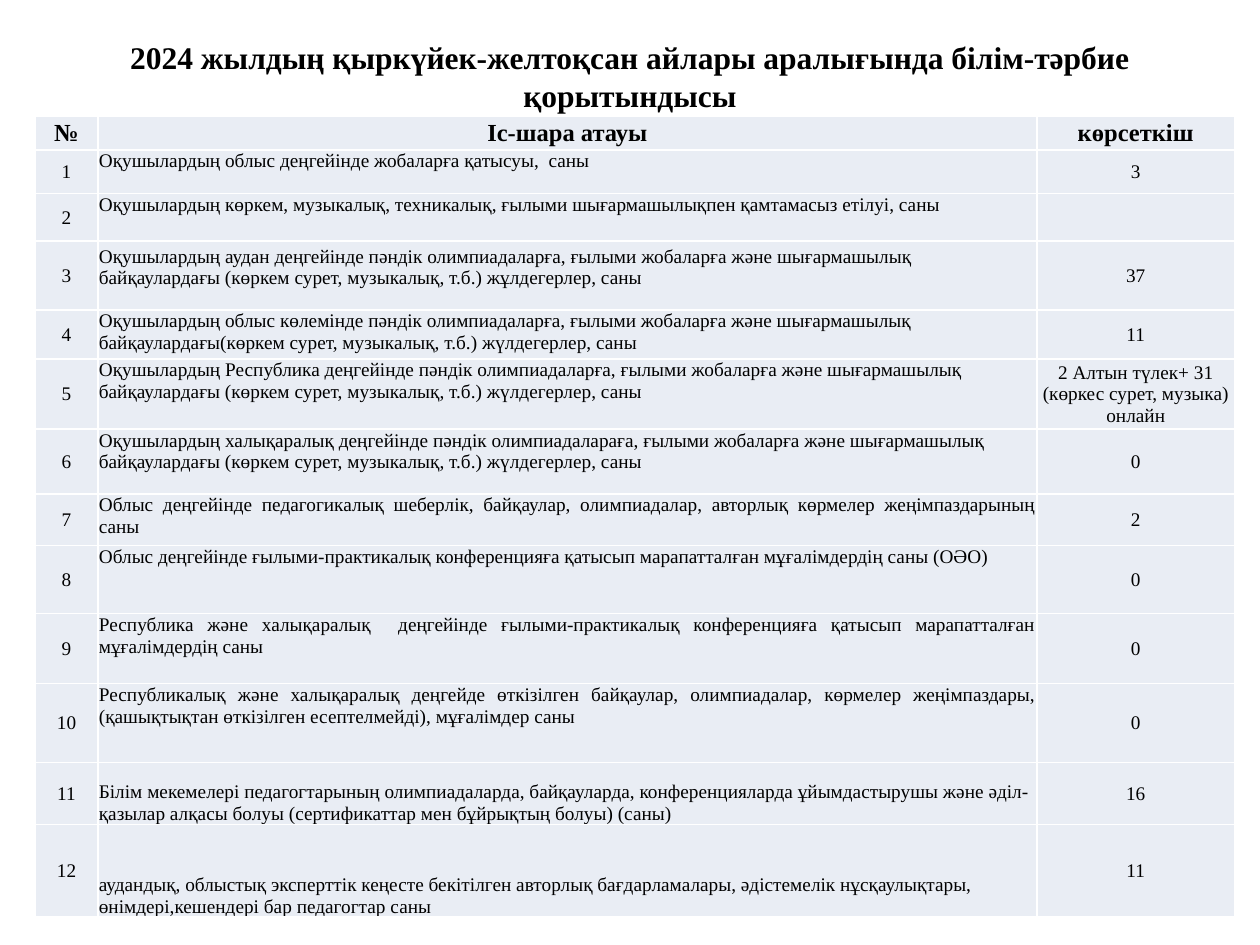
import pptx
import pptx.dml.color
import pptx.enum.text
import pptx.oxml
import pptx.oxml.ns
import pptx.util

Pt = pptx.util.Pt
ALIGN = pptx.enum.text.PP_ALIGN
ANCHOR = pptx.enum.text.MSO_ANCHOR
FONT = "Times New Roman"
BLACK, WHITE, CELL_FILL = "000000", "FFFFFF", "E9EDF4"

TITLE = "2024 жылдың қыркүйек-желтоқсан айлары аралығында білім-тәрбие қорытындысы"
HEADINGS = ("№", "Іс-шара атауы", "көрсеткіш")
COLUMN_WIDTHS = (36, 536.5, 113)
HEADING_HEIGHT = 19.5
LEFT, JUSTIFY = ALIGN.LEFT, ALIGN.JUSTIFY
TOP, BOTTOM = ANCHOR.TOP, ANCHOR.BOTTOM

# Row height, activity, result, activity alignment, activity anchor, top inset
ACTIVITIES = (
    (25, "Оқушылардың облыс деңгейінде жобаларға қатысуы,  саны",
     "3", LEFT, TOP, 0.5),
    (27, "Оқушылардың көркем, музыкалық, техникалық, ғылыми шығармашылықпен "
         "қамтамасыз етілуі, саны",
     "", LEFT, TOP, 0.5),
    (39.5, "Оқушылардың аудан деңгейінде пәндік олимпиадаларға, ғылыми жобаларға және "
           "шығармашылық байқаулардағы (көркем сурет, музыкалық, т.б.) жұлдегерлер, саны",
     "37", LEFT, TOP, 3),
    (28, "Оқушылардың облыс көлемінде пәндік олимпиадаларға, ғылыми жобаларға және "
         "шығармашылық байқаулардағы(көркем сурет, музыкалық, т.б.) жүлдегерлер, саны",
     "11", LEFT, TOP, 0.5),
    (37, "Оқушылардың Республика деңгейінде пәндік олимпиадаларға, ғылыми жобаларға және "
         "шығармашылық байқаулардағы (көркем сурет, музыкалық, т.б.) жүлдегерлер, саны",
     "2 Алтын түлек+ 31 (көркес сурет, музыка) онлайн", LEFT, TOP, 0.5),
    (37, "Оқушылардың халықаралық деңгейінде пәндік олимпиадалараға, ғылыми жобаларға және "
         "шығармашылық байқаулардағы (көркем сурет, музыкалық, т.б.) жүлдегерлер, саны",
     "0", LEFT, TOP, 0.5),
    (29.5, "Облыс деңгейінде педагогикалық шеберлік, байқаулар, олимпиадалар, авторлық "
           "көрмелер жеңімпаздарының саны",
     "2", JUSTIFY, TOP, 0.5),
    (39, "Облыс деңгейінде ғылыми-практикалық конференцияға қатысып марапатталған "
         "мұғалімдердің саны (ОӘО)",
     "0", JUSTIFY, TOP, 0.5),
    (40, "Республика және халықаралық  деңгейінде ғылыми-практикалық конференцияға "
         "қатысып марапатталған мұғалімдердің саны",
     "0", JUSTIFY, TOP, 0.5),
    (45, "Республикалық және халықаралық деңгейде өткізілген байқаулар, олимпиадалар, "
         "көрмелер жеңімпаздары,(қашықтықтан өткізілген есептелмейді), мұғалімдер саны",
     "0", JUSTIFY, TOP, 0.5),
    (35.5, "Білім мекемелері педагогтарының олимпиадаларда, байқауларда, конференцияларда "
           "ұйымдастырушы және әділ-қазылар алқасы болуы (сертификаттар мен бұйрықтың "
           "болуы) (саны)",
     "16", LEFT, BOTTOM, 0.5),
    (53, "аудандық, облыстық эксперттік кеңесте бекітілген авторлық бағдарламалары, "
         "әдістемелік нұсқаулықтары, өнімдері,кешендері бар педагогтар саны",
     "11", LEFT, BOTTOM, 0.5),
)


def color(hex_value):
    return pptx.dml.color.RGBColor.from_string(hex_value)


def write(paragraph, text, size, bold=False, align=ALIGN.CENTER):
    paragraph.alignment = align
    if not text:
        paragraph.font.size = Pt(size)
        return
    run = paragraph.add_run()
    run.text = text
    run.font.name = FONT
    run.font.size = Pt(size)
    run.font.bold = bold
    run.font.color.rgb = color(BLACK)


def add_title(slide):
    title = slide.shapes.add_textbox(Pt(36), Pt(21.6), Pt(648), Pt(44))
    frame = title.text_frame
    frame.word_wrap = True
    frame.margin_top = frame.margin_bottom = 0
    write(frame.paragraphs[0], TITLE, 18, bold=True)


def set_borders(cell, hex_value, width):
    properties = cell._tc.get_or_add_tcPr()
    for index, side in enumerate(("lnL", "lnR", "lnT", "lnB")):
        border = pptx.oxml.parse_xml(
            f'<a:{side} {pptx.oxml.ns.nsdecls("a")} w="{Pt(width)}"><a:solidFill>'
            f'<a:srgbClr val="{hex_value}"/></a:solidFill></a:{side}>')
        properties.insert(index, border)


def fill_cell(cell, text, size=11, bold=False, align=ALIGN.CENTER,
              anchor=ANCHOR.MIDDLE, top_inset=0.5):
    cell.fill.solid()
    cell.fill.fore_color.rgb = color(CELL_FILL)
    set_borders(cell, WHITE, 1)
    cell.margin_left = cell.margin_right = Pt(0.5)
    cell.margin_top, cell.margin_bottom = Pt(top_inset), 0
    cell.vertical_anchor = anchor
    write(cell.text_frame.paragraphs[0], text, size, bold, align)


def add_results_table(slide):
    heights = [HEADING_HEIGHT] + [activity[0] for activity in ACTIVITIES]
    table = slide.shapes.add_table(
        len(heights), len(HEADINGS), Pt(20), Pt(66.2),
        Pt(sum(COLUMN_WIDTHS)), Pt(sum(heights))).table
    for column, width in zip(table.columns, COLUMN_WIDTHS):
        column.width = Pt(width)
    for row, height in zip(table.rows, heights):
        row.height = Pt(height)
    for column, heading in enumerate(HEADINGS):
        fill_cell(table.cell(0, column), heading, size=14, bold=True)
    for number, (_, activity, result, align, anchor, inset) in enumerate(ACTIVITIES, 1):
        fill_cell(table.cell(number, 0), str(number))
        fill_cell(table.cell(number, 1), activity, align=align, anchor=anchor,
                  top_inset=inset)
        fill_cell(table.cell(number, 2), result)


def main():
    presentation = pptx.Presentation()
    presentation.slide_width, presentation.slide_height = Pt(720), Pt(540)
    slide = presentation.slides.add_slide(presentation.slide_layouts[6])
    add_title(slide)
    add_results_table(slide)
    presentation.save("out.pptx")


if __name__ == "__main__":
    main()
